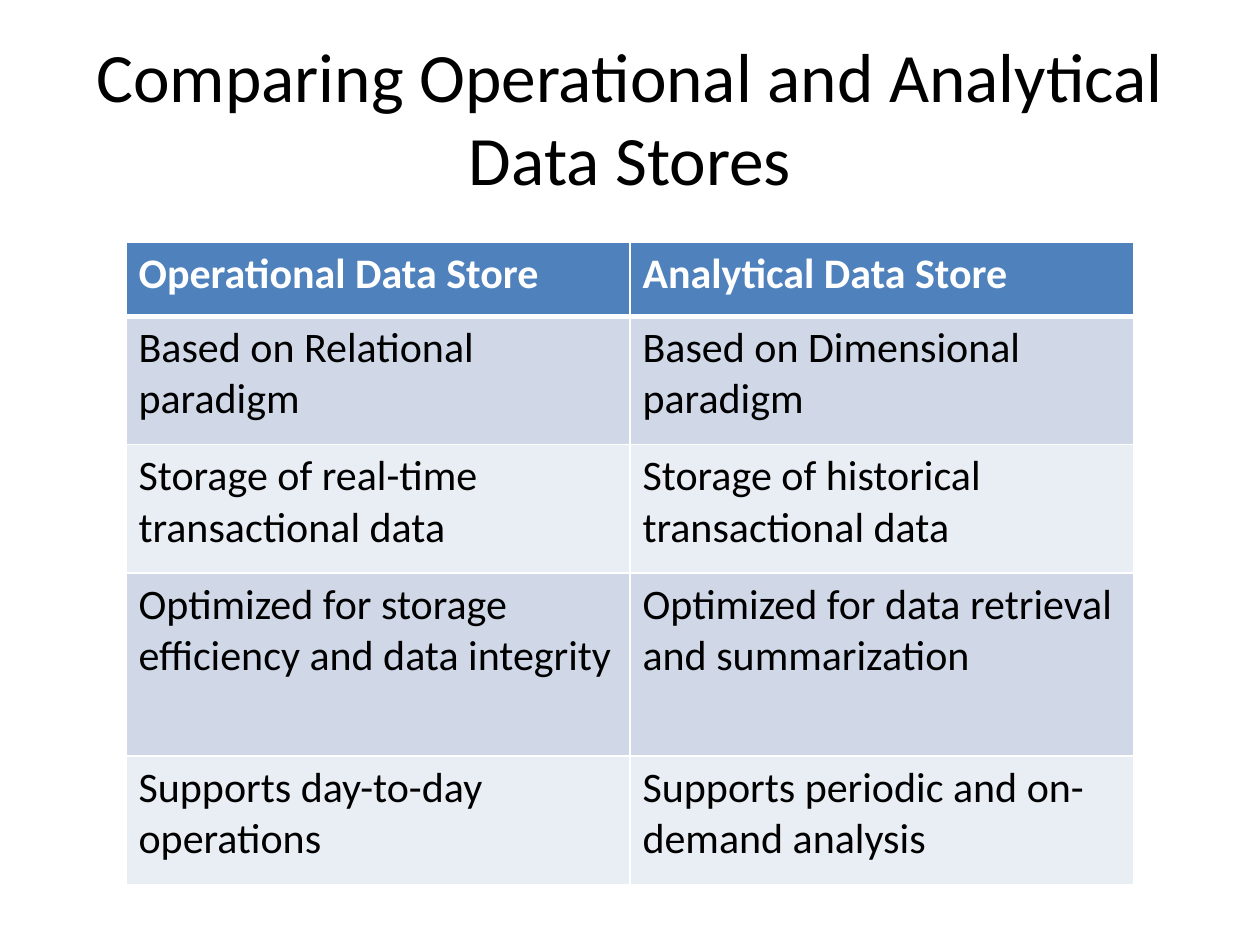
from lxml import etree
from pptx import Presentation
from pptx.dml.color import RGBColor
from pptx.enum.text import MSO_ANCHOR, PP_ALIGN
from pptx.oxml.ns import qn
from pptx.util import Inches, Pt

CENTER = PP_ALIGN.CENTER
MIDDLE = MSO_ANCHOR.MIDDLE

BLACK = RGBColor(0x00, 0x00, 0x00)
WHITE = RGBColor(0xFF, 0xFF, 0xFF)
HEADER = RGBColor(0x4F, 0x81, 0xBD)
BANDS = (RGBColor(0xE9, 0xED, 0xF4), RGBColor(0xD0, 0xD8, 0xE8))

FONT = "Calibri"
TITLE_FORMAT = {"name": FONT, "size": Pt(39.6), "bold": False}
HEADER_FORMAT = {"name": FONT, "size": Pt(24), "bold": True}
BODY_FORMAT = {"name": FONT, "size": Pt(24), "bold": False}

TITLE = "Comparing Operational and Analytical Data Stores"
ROWS = [
    ("Operational Data Store", "Analytical Data Store"),
    ("Based on Relational paradigm", "Based on Dimensional paradigm"),
    ("Storage of real-time transactional data",
     "Storage of historical transactional data"),
    ("Optimized for storage efficiency and data integrity",
     "Optimized for data retrieval and summarization"),
    ("Supports day-to-day operations",
     "Supports periodic and on-demand analysis"),
]
ROW_HEIGHTS = (0.59, 1.02, 1.02, 1.45, 1.02)


def write(tf, text, font_format, color):
    p = tf.paragraphs[0]
    r = p.add_run()
    r.text = text
    for name, value in font_format.items():
        setattr(r.font, name, value)
    r.font.color.rgb = color
    return p


def set_borders(cell, widths):
    """Draw white cell borders; widths maps an edge (L, R, T, B) to points."""
    tc_pr = cell._tc.get_or_add_tcPr()
    for i, (edge, width) in enumerate(widths.items()):
        ln = etree.Element(qn(f"a:ln{edge}"), w=str(Pt(width)))
        fill = etree.SubElement(ln, qn("a:solidFill"))
        etree.SubElement(fill, qn("a:srgbClr"), val=str(WHITE))
        tc_pr.insert(i, ln)


def add_title(slide, left, top, width, height):
    sp = slide.shapes.title
    box = {"left": left, "top": top, "width": width, "height": height}
    for name, value in box.items():
        setattr(sp, name, value)
    tf = sp.text_frame
    tf.word_wrap = True
    tf.vertical_anchor = MIDDLE
    write(tf, TITLE, TITLE_FORMAT, BLACK).alignment = CENTER


def add_comparison(slide, left, top, width):
    cols = len(ROWS[0])
    height = Inches(sum(ROW_HEIGHTS))
    table = slide.shapes.add_table(
        len(ROWS), cols, left, top, width, height).table
    for column in table.columns:
        column.width = width // cols
    for i, (texts, row_height) in enumerate(zip(ROWS, ROW_HEIGHTS)):
        table.rows[i].height = Inches(row_height)
        is_header = i == 0
        for j, text in enumerate(texts):
            cell = table.cell(i, j)
            cell.fill.solid()
            cell.fill.fore_color.rgb = HEADER if is_header else BANDS[i % 2]
            write(cell.text_frame, text,
                  HEADER_FORMAT if is_header else BODY_FORMAT,
                  WHITE if is_header else BLACK)
            set_borders(cell, {"L": 1, "R": 1, "T": 3 if i == 1 else 1,
                               "B": 3 if is_header else 1})


def main():
    prs = Presentation()
    prs.slide_width, prs.slide_height = Inches(10), Inches(7.5)
    w, h = prs.slide_width, prs.slide_height
    title_only = prs.slide_layouts[5]
    slide = prs.slides.add_slide(title_only)
    add_title(slide, int(w * 0.05), int(h * 0.04), int(w * 0.9), Inches(1.25))
    add_comparison(slide, int(w * 0.1), Inches(1.92), int(w * 0.8))
    prs.save("out.pptx")


if __name__ == "__main__":
    main()
